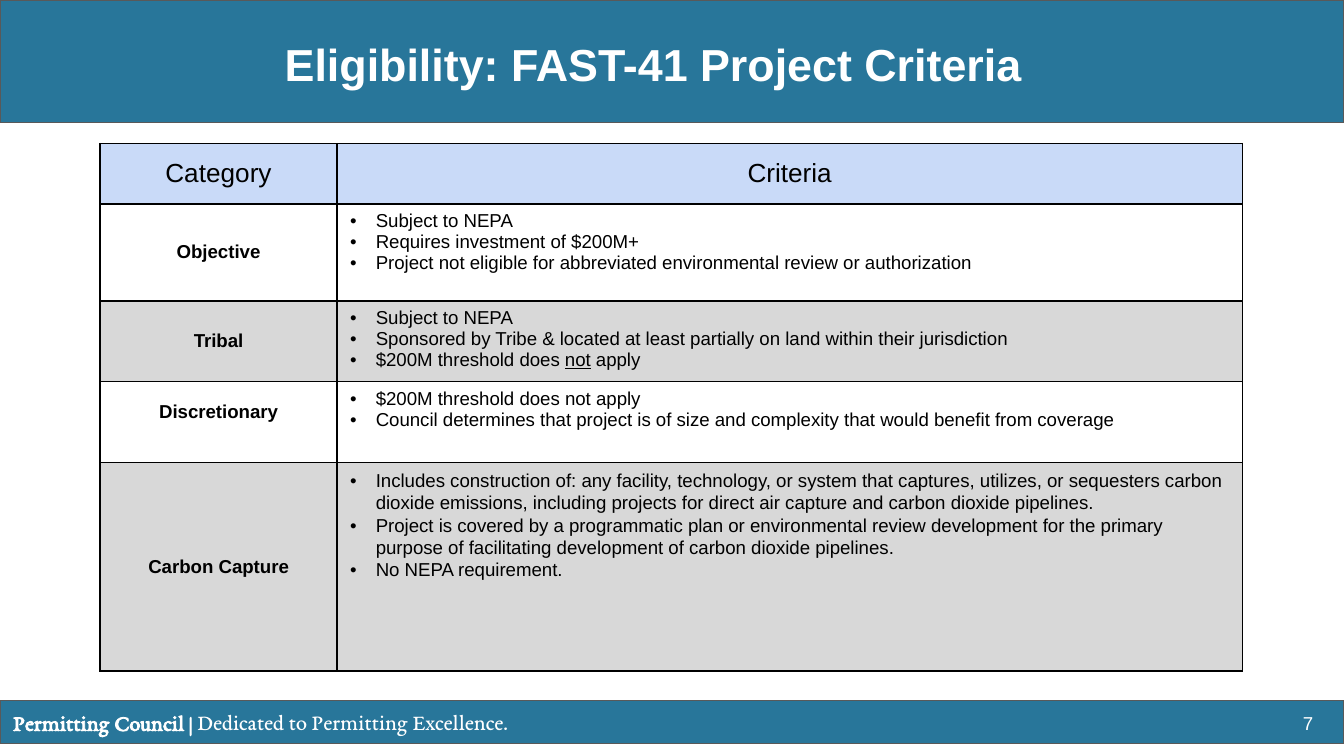
import pptx
import pptx.dml.color
import pptx.enum.shapes
import pptx.enum.text
import pptx.oxml
import pptx.oxml.ns
import pptx.util

RGBColor = pptx.dml.color.RGBColor
ALIGN = pptx.enum.text.PP_ALIGN
ANCHOR = pptx.enum.text.MSO_ANCHOR

TEAL = RGBColor(0x28, 0x76, 0x9A)
OUTLINE = RGBColor(0x59, 0x59, 0x59)
HEADER_BLUE = RGBColor(0xC9, 0xDA, 0xF8)
GREY = RGBColor(0xD8, 0xD8, 0xD8)
WHITE = RGBColor(0xFF, 0xFF, 0xFF)
BLACK = RGBColor(0x00, 0x00, 0x00)

presentation = pptx.Presentation()
presentation.slide_width = pptx.util.Inches(10)
presentation.slide_height = presentation.slide_width * 9 // 16
slide = presentation.slides.add_slide(presentation.slide_layouts[6])


def place(left, top, width, height):
    across = presentation.slide_width / 100
    down = presentation.slide_height / 100
    return [round(value) for value in (left * across, top * down, width * across, height * down)]


def write(paragraph, runs, size=10, color=BLACK, font="Arial", bold=False,
          align=ALIGN.LEFT, bullet=False, spacing=None):
    paragraph.alignment = align
    if spacing:
        paragraph.line_spacing = spacing
    if bullet:
        properties = paragraph._p.get_or_add_pPr()
        indent = pptx.util.Inches(0.19)
        properties.set("marL", str(indent))
        properties.set("indent", str(-indent))
        namespace = pptx.oxml.ns.nsdecls("a")
        for element in (
            f'<a:buClr {namespace}><a:srgbClr val="{BLACK}"/></a:buClr>',
            f'<a:buFont {namespace} typeface="Arial"/>',
            f'<a:buChar {namespace} char="•"/>',
        ):
            properties.append(pptx.oxml.parse_xml(element))
    for text, changes in runs:
        run = paragraph.add_run()
        run.text = text
        run.font.name = font
        run.font.size = pptx.util.Pt(size)
        run.font.color.rgb = color
        run.font.bold = changes.get("bold", bold)
        if changes.get("underline"):
            run.font.underline = True


bars = []
for top, height in ((92.65, 5.69), (0, 16.2)):
    bar = slide.shapes.add_shape(
        pptx.enum.shapes.MSO_SHAPE.RECTANGLE, *place(0, top, 100, height))
    bar.shadow.inherit = False
    bar.fill.solid()
    bar.fill.fore_color.rgb = TEAL
    bar.line.color.rgb = OUTLINE
    bar.line.width = pptx.util.Pt(0.75)
    bars.append(bar)

title = slide.shapes.add_textbox(*place(2, 3.1, 93.2, 11.2))
page_number = slide.shapes.add_textbox(*place(92.7, 91.75, 6, 7.65))

footer_runs = [("Permitting Council | ", {"bold": True}),
               ("Dedicated to Permitting Excellence.", {})]
for shape, anchor, runs, style in (
    (bars[0], ANCHOR.MIDDLE, footer_runs, dict(size=12, font="EB Garamond")),
    (title, ANCHOR.TOP, [("Eligibility: FAST-41 Project Criteria", {})],
     dict(size=24, bold=True, align=ALIGN.CENTER)),
    (page_number, ANCHOR.MIDDLE, [("7", {})], dict(align=ALIGN.RIGHT)),
):
    frame = shape.text_frame
    frame.word_wrap = True
    frame.vertical_anchor = anchor
    frame.margin_left = frame.margin_right = pptx.util.Inches(0.1)
    frame.margin_top = frame.margin_bottom = pptx.util.Inches(0.1)
    write(frame.paragraphs[0], runs, color=WHITE, **style)

criteria = [
    ("Objective", 12.8, WHITE, None, [
        [("Subject to NEPA", {})],
        [("Requires investment of $200M+", {})],
        [("Project not eligible for abbreviated environmental review or authorization", {})],
    ]),
    ("Tribal", 10.7, GREY, None, [
        [("Subject to NEPA", {})],
        [("Sponsored by Tribe & located at least partially on land within their jurisdiction", {})],
        [("$200M threshold does ", {}), ("not", {"underline": True}), (" apply", {})],
    ]),
    ("Discretionary", 10.7, WHITE, None, [
        [("$200M threshold does not apply", {})],
        [("Council determines that project is of size and complexity that would benefit from coverage", {})],
    ]),
    ("Carbon Capture", 27.56, GREY, 1.07, [
        [("Includes construction of: any facility, technology, or system that captures, utilizes, "
          "or sequesters carbon dioxide emissions, including projects for direct air capture "
          "and carbon dioxide pipelines.", {})],
        [("Project is covered by a programmatic plan or environmental review development for "
          "the primary purpose of facilitating development of carbon dioxide pipelines.", {})],
        [("No NEPA requirement.", {})],
    ]),
]

row_shares = [8] + [share for _, share, *_ in criteria]
table = slide.shapes.add_table(
    len(row_shares), 2, *place(7.46, 19, 85, sum(row_shares))).table
for column, share in zip(table.columns, (17.6, 67.4)):
    column.width = place(0, 0, share, 0)[2]
for row, share in zip(table.rows, row_shares):
    row.height = place(0, 0, 0, share)[3]

for cell, heading in zip(table.rows[0].cells, ("Category", "Criteria")):
    write(cell.text_frame.paragraphs[0], [(heading, {})], size=14, align=ALIGN.CENTER)

for row_index, (category, _, _, spacing, bullets) in enumerate(criteria, 1):
    write(table.cell(row_index, 0).text_frame.paragraphs[0], [(category, {})],
          bold=True, align=ALIGN.CENTER)
    frame = table.cell(row_index, 1).text_frame
    for index, runs in enumerate(bullets):
        paragraph = frame.add_paragraph() if index else frame.paragraphs[0]
        write(paragraph, runs, bullet=True, spacing=spacing)

row_fills = [HEADER_BLUE] + [fill for _, _, fill, *_ in criteria]
for row_index, (row, fill) in enumerate(zip(table.rows, row_fills)):
    for column_index, cell in enumerate(row.cells):
        cell.fill.solid()
        cell.fill.fore_color.rgb = fill
        cell.margin_left = cell.margin_right = pptx.util.Inches(0.1)
        cell.margin_top = cell.margin_bottom = pptx.util.Inches(0.05)
        centred = row_index == 0 or column_index == 0
        cell.vertical_anchor = ANCHOR.MIDDLE if centred else ANCHOR.TOP
        for position, side in enumerate(("lnL", "lnR", "lnT", "lnB")):
            border = pptx.oxml.parse_xml(
                f'<a:{side} {pptx.oxml.ns.nsdecls("a")} w="{pptx.util.Pt(1)}">'
                f'<a:solidFill><a:srgbClr val="{BLACK}"/></a:solidFill></a:{side}>')
            cell._tc.get_or_add_tcPr().insert(position, border)

discretionary = table.cell(3, 0)
discretionary.margin_left = discretionary.margin_right = pptx.util.Inches(0.05)
discretionary.margin_bottom = pptx.util.Inches(0.2)

presentation.save("out.pptx")
